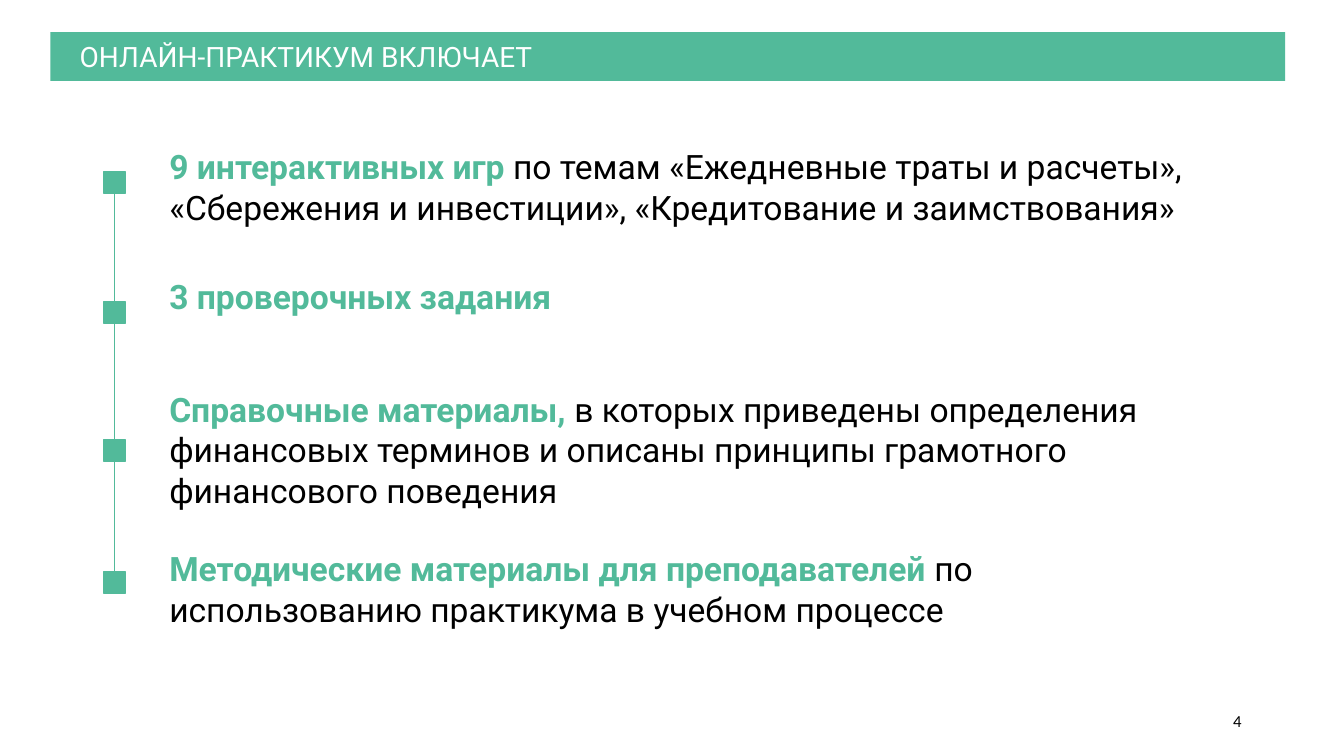
import pptx
import pptx.dml.color
import pptx.enum.shapes
import pptx.enum.text
import pptx.oxml
import pptx.util

Pt = pptx.util.Pt
COLORS = {"green": "52BA9A", "white": "FFFFFF", "black": "000000"}
TEXT_LEFT, TEXT_WIDTH = 113.8, 774
MARK_LEFT, MARK_WIDTH, MARK_HEIGHT = 74.2, 15.1, 15.8

# text top, text height, marker top, bold lead, remaining text
ITEMS = [
    (100.8, 65.4, 122.4, "9 интерактивных игр ",
     "по темам «Ежедневные траты и расчеты», «Сбережения и инвестиции», "
     "«Кредитование и заимствования»"),
    (193.7, 36.3, 215.3, "3 проверочных задания", ""),
    (274.3, 94.5, 313.9, "Справочные материалы, ",
     "в которых приведены определения финансовых терминов и описаны "
     "принципы грамотного финансового поведения"),
    (388.1, 65.4, 408.2, "Методические материалы для преподавателей ",
     "по использованию практикума в учебном процессе"),
]


class Deck:
    """Holds the style and the current slide."""

    def __init__(self, prs, font):
        self.font = font
        self.s = prs.slides.add_slide(prs.slide_layouts[5])

    def rgb(self, name):
        return pptx.dml.color.RGBColor.from_string(COLORS[name])

    def style(self, p, size, color, font=None):
        p.font.name = font or self.font
        p.font.size = Pt(size)
        p.font.color.rgb = self.rgb(color)

    def title(self, text, x, y, w, h):
        sp = self.s.shapes.title
        sp.left, sp.top, sp.width, sp.height = Pt(x), Pt(y), Pt(w), Pt(h)
        sp.fill.solid()
        sp.fill.fore_color.rgb = self.rgb("green")
        tf = sp.text_frame
        tf.text = text
        tf.auto_size = pptx.enum.text.MSO_AUTO_SIZE.NONE
        tf.vertical_anchor = pptx.enum.text.MSO_ANCHOR.MIDDLE
        tf.margin_left = Pt(20.9)
        p = tf.paragraphs[0]
        p.alignment = pptx.enum.text.PP_ALIGN.LEFT
        self.style(p, 20, "white")

    def textbox(self, x, y, w, h):
        tf = self.s.shapes.add_textbox(Pt(x), Pt(y), Pt(w), Pt(h)).text_frame
        tf.word_wrap = True
        return tf

    def item(self, lead, rest, y, h):
        p = self.textbox(TEXT_LEFT, y, TEXT_WIDTH, h).paragraphs[0]
        self.style(p, 24, "black")
        r = p.add_run()
        r.text = lead
        r.font.bold = True
        r.font.color.rgb = self.rgb("green")
        if rest:
            p.add_run().text = rest

    def marker(self, y):
        sp = self.s.shapes.add_shape(
            pptx.enum.shapes.MSO_SHAPE.RECTANGLE,
            Pt(MARK_LEFT), Pt(y), Pt(MARK_WIDTH), Pt(MARK_HEIGHT))
        sp.shadow.inherit = False
        sp.fill.solid()
        sp.fill.fore_color.rgb = self.rgb("green")
        sp.line.color.rgb = self.rgb("green")
        sp.line.width = Pt(1)

    def link(self, top, bottom):
        x = Pt(MARK_LEFT + MARK_WIDTH / 2)
        line = self.s.shapes.add_connector(
            pptx.enum.shapes.MSO_CONNECTOR.STRAIGHT, x, Pt(bottom), x, Pt(top))
        line.line.color.rgb = self.rgb("green")
        line.line.width = Pt(0.5)
        effects = pptx.oxml.parse_xml(
            '<a:effectLst xmlns:a="http://schemas.openxmlformats.org/drawingml/2006/main"/>')
        line._element.spPr.append(effects)

    def page_number(self, text, x, y, w, h):
        tf = self.textbox(x, y, w, h)
        tf.text = text
        tf.vertical_anchor = pptx.enum.text.MSO_ANCHOR.MIDDLE
        p = tf.paragraphs[0]
        p.alignment = pptx.enum.text.PP_ALIGN.RIGHT
        self.style(p, 12, "black", "Calibri")


def main():
    prs = pptx.Presentation()
    prs.slide_width, prs.slide_height = Pt(960), Pt(540)
    deck = Deck(prs, "Roboto")

    # Heading bar
    deck.title("ОНЛАЙН-ПРАКТИКУМ ВКЛЮЧАЕТ", 36, 23, 882, 34.8)

    # Timeline: links run from each marker to the next
    marks = [item[2] for item in ITEMS]
    for mark, following in zip(marks, marks[1:]):
        deck.link(mark + MARK_HEIGHT, following)
    for mark in marks:
        deck.marker(mark)

    # Contents of the course
    for top, height, _, lead, rest in ITEMS:
        deck.item(lead, rest, top, height)

    # Footer
    deck.page_number("4", 678, 500.5, 216, 28.8)
    prs.save("out.pptx")


if __name__ == "__main__":
    main()
